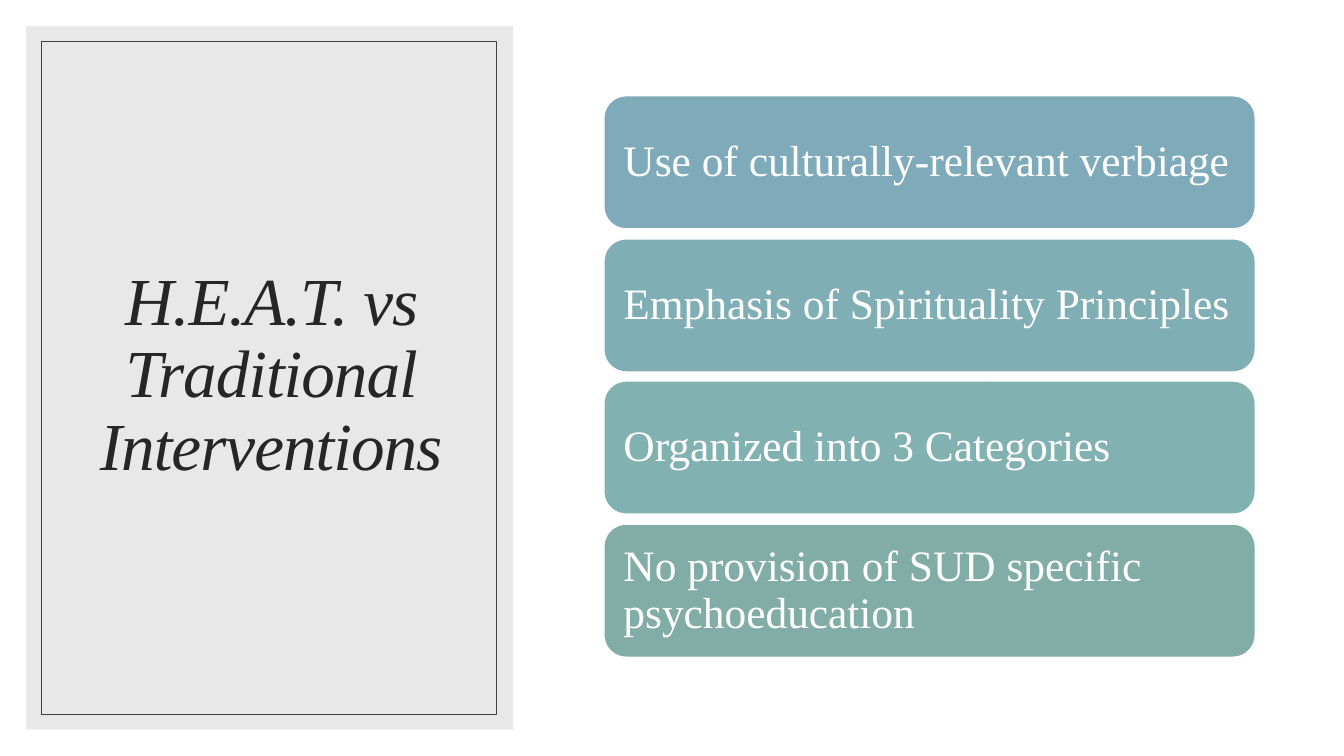
from dataclasses import dataclass

from lxml.etree import SubElement
from pptx import Presentation
from pptx.dml.color import RGBColor
from pptx.enum.shapes import MSO_SHAPE as Preset
from pptx.enum.text import MSO_ANCHOR as Anchor, MSO_AUTO_SIZE as AutoSize, PP_ALIGN as Align
from pptx.oxml.ns import qn
from pptx.shapes.autoshape import Shape
from pptx.slide import Slide
from pptx.util import Emu, Pt

EMU_PER_PX = 9144
FONT = "Times New Roman"
CARD_LEFT, CARD_TOP, CARD_WIDTH, CARD_HEIGHT = 599, 95, 646, 132
LAST_CARD_TOP = 520


@dataclass(frozen=True)
class Difference:
    """One point on which H.E.A.T. differs, with its card colour."""
    wording: str
    fill: str


DIFFERENCES = [
    Difference("Use of culturally-relevant verbiage", "7FAABA"),
    Difference("Emphasis of Spirituality Principles", "80AEB5"),
    Difference("Organized into 3 Categories", "81B1B1"),
    Difference("No provision of SUD specific psychoeducation", "82ACA6"),
]


def px(length: int) -> Emu:
    """Turn whole pixels into EMU."""
    return Emu(length * EMU_PER_PX)


def colour(value: str) -> RGBColor:
    """Turn a hex string into a colour."""
    return RGBColor.from_string(value)


def write(shape: Shape, wording: str, *, size: int, ink: str, align: Align,
          inset_x: int, inset_y: int, italic: bool = False, tracking: float = 0) -> None:
    """Fill a shape with one formatted, vertically centred paragraph."""
    frame = shape.text_frame
    frame.word_wrap = True
    frame.auto_size = AutoSize.NONE
    frame.vertical_anchor = Anchor.MIDDLE
    frame.margin_left = frame.margin_right = px(inset_x)
    frame.margin_top = frame.margin_bottom = px(inset_y)
    paragraph = frame.paragraphs[0]
    paragraph.alignment = align
    paragraph.line_spacing = 0.9
    run = paragraph.add_run()
    run.text = wording
    run.font.name = FONT
    run.font.size = Pt(size)
    run.font.italic = italic
    run.font.color.rgb = colour(ink)
    if tracking:
        run.font._element.set("spc", str(round(tracking * 100)))


def draw(slide: Slide, preset: Preset, left: int, top: int, width: int, height: int, *,
         fill: str = "", opacity: int = 100, line: str = "", weight: float = 1) -> Shape:
    """Add a preset shape with the given fill and outline."""
    shape = slide.shapes.add_shape(preset, px(left), px(top), px(width), px(height))
    shape.shadow.inherit = False
    if fill:
        shape.fill.solid()
        shape.fill.fore_color.rgb = colour(fill)
    else:
        shape.fill.background()
    if opacity < 100:
        tint = shape._element.spPr.find(f".//{qn('a:srgbClr')}")
        SubElement(tint, qn("a:alpha"), val=str(opacity * 1000))
    if line:
        shape.line.color.rgb = colour(line)
        shape.line.width = Pt(weight)
    else:
        shape.line.fill.background()
    return shape


def add_heading(slide: Slide) -> None:
    """Set the title on its framed grey panel."""
    panel = draw(slide, Preset.RECTANGLE, 26, 26, 483, 698, fill="D9D9D9", opacity=60)
    heading = slide.shapes.title
    heading._element.addprevious(panel._element)
    heading.left, heading.top, heading.width, heading.height = map(px, (63, 61, 412, 624))
    write(heading, "H.E.A.T. vs Traditional Interventions", size=48, ink="262626",
          align=Align.CENTER, inset_x=10, inset_y=5, italic=True, tracking=-0.7)
    draw(slide, Preset.RECTANGLE, 41, 41, 451, 668, line="404040", weight=0.5)


def add_differences(slide: Slide) -> None:
    """Stack the difference cards at equal steps."""
    step = (LAST_CARD_TOP - CARD_TOP) / (len(DIFFERENCES) - 1)
    for index, difference in enumerate(DIFFERENCES):
        card = draw(slide, Preset.ROUNDED_RECTANGLE, CARD_LEFT, CARD_TOP + round(index * step),
                    CARD_WIDTH, CARD_HEIGHT, fill=difference.fill, line="FFFFFF")
        write(card, difference.wording, size=31, ink="FFFFFF", align=Align.LEFT,
              inset_x=13, inset_y=13)


def main() -> None:
    """Build and save the slide."""
    deck = Presentation()
    deck.slide_width, deck.slide_height = px(1333), px(750)
    slide = deck.slides.add_slide(deck.slide_layouts[5])
    slide.background.fill.solid()
    slide.background.fill.fore_color.rgb = colour("FFFFFF")
    add_heading(slide)
    add_differences(slide)
    deck.save("out.pptx")


if __name__ == "__main__":
    main()
